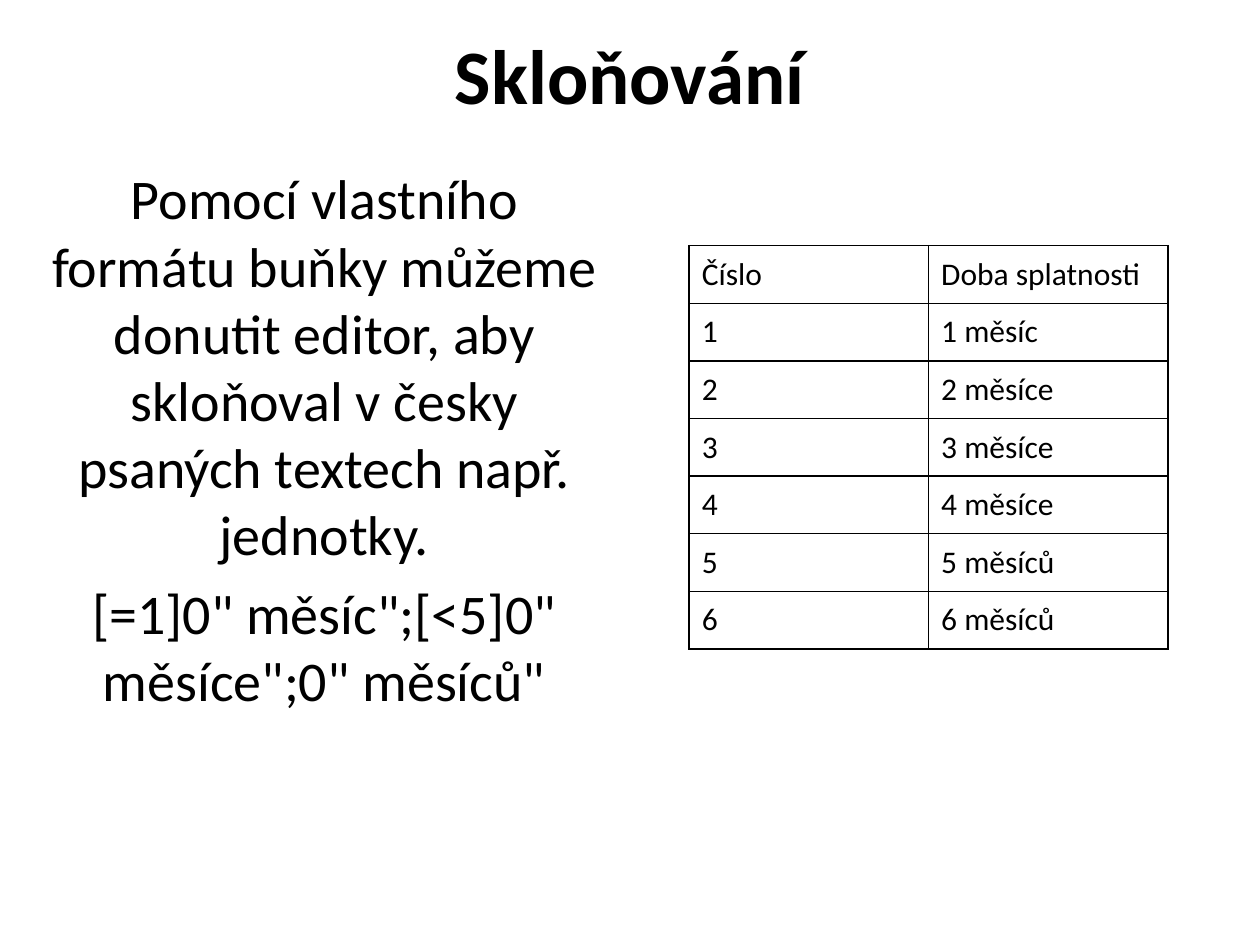
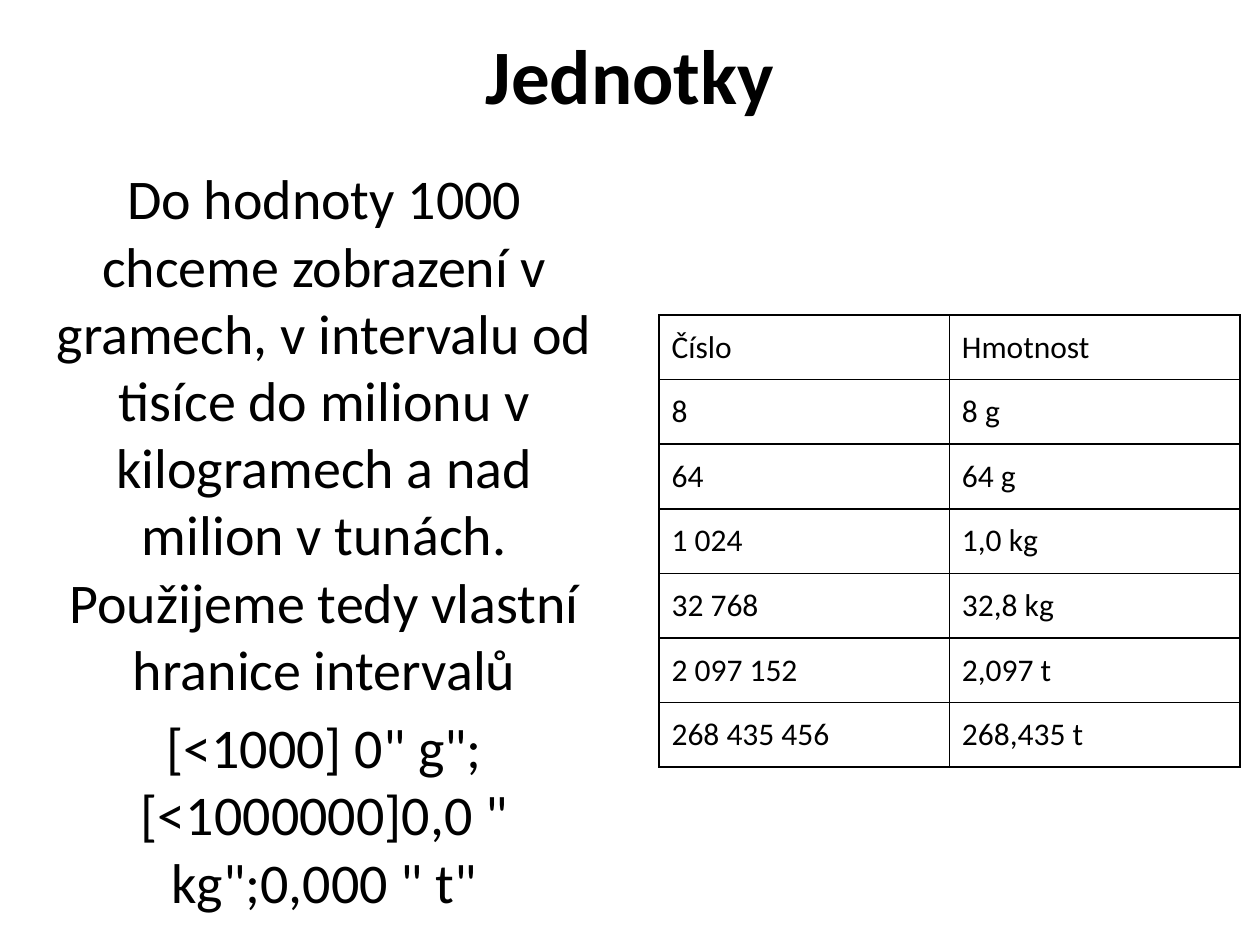
from lxml.etree import SubElement
from pptx import Presentation
from pptx.dml.color import RGBColor
from pptx.enum.text import MSO_ANCHOR as Anchor, MSO_AUTO_SIZE as AutoSize, PP_ALIGN as Align
from pptx.oxml.ns import qn
from pptx.util import Inches, Pt

# Grid: 100 columns by 75 rows on a 10 x 7.5 inch page
COLUMNS, ROWS = 100, 75


def rgb(hex_code):
    return RGBColor.from_string(hex_code)


class Deck:
    font, ink, paper = "Calibri", "000000", "FFFFFF"
    title_box = (0, 0, 100, 11.7)
    body_box = (2.3, 12.5, 46.9, 60.9)

    def __init__(self):
        self.prs = Presentation()
        self.prs.slide_width, self.prs.slide_height = Inches(10), Inches(7.5)
        self.s = None

    def grid(self, left, top, width, height):
        col, row = self.prs.slide_width / COLUMNS, self.prs.slide_height / ROWS
        return [int(n) for n in (left * col, top * row, width * col, height * row)]

    def new_slide(self):
        self.s = self.prs.slides.add_slide(self.prs.slide_layouts[0])
        fill = self.s.background.fill
        fill.solid()
        fill.fore_color.rgb = rgb(self.paper)

    def style(self, p, size, align=Align.LEFT, bold=False, before=0):
        p.alignment, p.space_before = align, Pt(before)
        for r in p.runs:
            r.font.name, r.font.size, r.font.bold = self.font, Pt(size), bold
            r.font.color.rgb = rgb(self.ink)

    def placeholder(self, sp, box, text, anchor, **look):
        sp.left, sp.top, sp.width, sp.height = self.grid(*box)
        tf = sp.text_frame
        tf.text = text
        tf.word_wrap, tf.auto_size, tf.vertical_anchor = True, AutoSize.NONE, anchor
        for p in tf.paragraphs:
            self.style(p, align=Align.CENTER, **look)

    def title(self, text):
        self.placeholder(self.s.shapes.title, self.title_box, text,
                         Anchor.MIDDLE, size=44, bold=True)

    def body(self, *paragraphs):
        # Space before is 20 % of the text size
        self.placeholder(self.s.placeholders[1], self.body_box, "\n".join(paragraphs),
                         Anchor.TOP, size=32, before=6.4)

    def border(self, cell):
        tc_pr = cell._tc.get_or_add_tcPr()
        for side in ("a:lnL", "a:lnR", "a:lnT", "a:lnB"):
            ln = SubElement(tc_pr, qn(side), w=str(Pt(1)))
            SubElement(SubElement(ln, qn("a:solidFill")), qn("a:srgbClr"), val=self.ink)

    def table(self, box, rows):
        frame = self.s.shapes.add_table(len(rows), len(rows[0]), *self.grid(*box))
        tbl = frame.table
        tbl.first_row = tbl.horz_banding = False
        for i, row in enumerate(rows):
            for j, text in enumerate(row):
                cell = tbl.cell(i, j)
                cell.text, cell.vertical_anchor = text, Anchor.MIDDLE
                self.style(cell.text_frame.paragraphs[0], 18)
                self.border(cell)
                cell.fill.background()


def month_word(n):
    return "měsíc" if n == 1 else "měsíce" if n < 5 else "měsíců"


def main():
    deck = Deck()

    # Declension of units
    deck.new_slide()
    deck.title("Skloňování")
    deck.body("Pomocí vlastního formátu buňky můžeme donutit editor, aby skloňoval "
              "v česky psaných textech např. jednotky.",
              '[=1]0" měsíc";[<5]0" měsíce";0" měsíců"')
    months = [(str(n), f"{n} {month_word(n)}") for n in range(1, 7)]
    deck.table((54.7, 19.5, 38, 32), [("Číslo", "Doba splatnosti"), *months])

    # Units of weight
    deck.new_slide()
    deck.title("Jednotky")
    deck.body("Do hodnoty 1000 chceme zobrazení v gramech, v intervalu od tisíce do "
              "milionu v kilogramech a nad milion v tunách. Použijeme tedy vlastní "
              "hranice intervalů",
              '[<1000] 0" g";[<1000000]0,0 " kg";0,000 " t"')
    deck.table((52.3, 25, 46.1, 35.9), [
        ("Číslo", "Hmotnost"),
        ("8", "8 g"),
        ("64", "64 g"),
        ("1 024", "1,0 kg"),
        ("32 768", "32,8 kg"),
        ("2 097 152", "2,097 t"),
        ("268 435 456", "268,435 t"),
    ])

    deck.prs.save("out.pptx")


if __name__ == "__main__":
    main()
